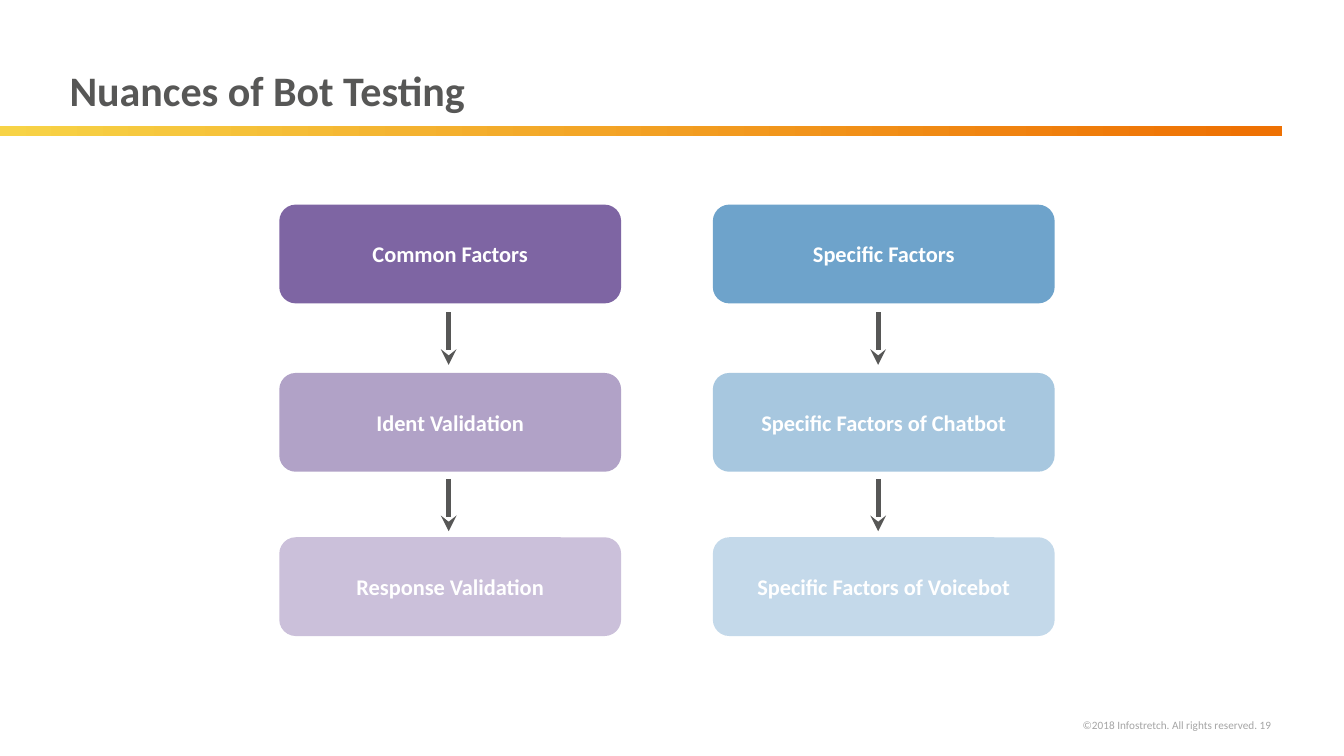
from lxml.etree import SubElement
from pptx import Presentation
from pptx.dml.color import RGBColor
from pptx.enum.shapes import MSO_CONNECTOR, MSO_SHAPE
from pptx.enum.text import MSO_ANCHOR, MSO_AUTO_SIZE, PP_ALIGN
from pptx.oxml.ns import qn
from pptx.util import Pt

EMU_PER_PX = 9144  # 100 px to the inch

WHITE = RGBColor(0xFF, 0xFF, 0xFF)
DARK_GRAY = RGBColor(0x57, 0x57, 0x56)
LIGHT_GRAY = RGBColor(0xA5, 0xA5, 0xA5)
YELLOW = RGBColor(0xF7, 0xD3, 0x46)
ORANGE = RGBColor(0xEE, 0x71, 0x03)
PURPLE = RGBColor(0x7E, 0x65, 0xA3)
MID_PURPLE = RGBColor(0xB1, 0xA2, 0xC7)
PALE_PURPLE = RGBColor(0xCB, 0xC0, 0xDA)
BLUE = RGBColor(0x6E, 0xA3, 0xCB)
MID_BLUE = RGBColor(0xA7, 0xC7, 0xDF)
PALE_BLUE = RGBColor(0xC4, 0xD9, 0xEA)

TITLE_FONT = {"size": Pt(30), "bold": True}
FACTOR_FONT = {"size": Pt(16), "bold": True}
FOOTER_FONT = {"size": Pt(8), "bold": False}

FACTOR_HEIGHT = 98
FACTOR_TOPS = (0, 167, 330)
ARROW_TOPS = (107, 272)
ARROW_LENGTH = 52

# box (left, top, width), arrow offset from the left edge, factors
FACTOR_COLUMNS = (
    ((277, 203, 339), 168, (
        ("Common Factors", PURPLE),
        ("Ident Validation", MID_PURPLE),
        ("Response Validation", PALE_PURPLE),
    )),
    ((707, 203, 339), 164, (
        ("Specific Factors", BLUE),
        ("Specific Factors of Chatbot", MID_BLUE),
        ("Specific Factors of Voicebot", PALE_BLUE),
    )),
)


def px(*lengths):
    return [length * EMU_PER_PX for length in lengths]


def write_text(shape, text, color, font_format, align, anchor):
    frame = shape.text_frame
    frame.text = text
    frame.word_wrap = True
    frame.auto_size = MSO_AUTO_SIZE.NONE
    frame.vertical_anchor = anchor
    paragraph = frame.paragraphs[0]
    paragraph.alignment = align
    font = paragraph.runs[0].font
    for name, value in {"name": "Calibri", **font_format}.items():
        setattr(font, name, value)
    font.color.rgb = color
    return paragraph


def add_header(slide, left, top, width, height):
    """Place the title in the box and the gradient bar below it."""
    title = slide.shapes.title
    title.left, title.top, title.width, title.height = px(left, top, width, height)
    paragraph = write_text(title, "Nuances of Bot Testing", DARK_GRAY, TITLE_FONT,
                           PP_ALIGN.LEFT, MSO_ANCHOR.BOTTOM)
    paragraph.line_spacing = 0.7

    bar = slide.shapes.add_shape(MSO_SHAPE.RECTANGLE,
                                 *px(0, top + height + 7, left + width, 10))
    bar.shadow.inherit = False
    bar.line.fill.background()
    bar.fill.gradient()
    bar.fill.gradient_angle = 0
    for stop, position, color in zip(bar.fill.gradient_stops, (0, 0.98), (YELLOW, ORANGE)):
        stop.position = position
        stop.color.rgb = color


def add_factor(slide, text, color, left, top, width, height):
    factor = slide.shapes.add_shape(MSO_SHAPE.ROUNDED_RECTANGLE,
                                    *px(left, top, width, height))
    factor.shadow.inherit = False
    factor.fill.solid()
    factor.fill.fore_color.rgb = color
    factor.line.fill.background()
    write_text(factor, text, WHITE, FACTOR_FONT, PP_ALIGN.CENTER, MSO_ANCHOR.MIDDLE)


def add_down_arrow(slide, x, top, length):
    arrow = slide.shapes.add_connector(MSO_CONNECTOR.STRAIGHT,
                                       *px(x, top, x, top + length))
    arrow.line.width = Pt(3.75)
    arrow.line.color.rgb = DARK_GRAY
    properties = arrow.element.spPr
    SubElement(properties.get_or_add_ln(), qn("a:tailEnd"), type="stealth")
    SubElement(properties, qn("a:effectLst"))


def add_factor_column(slide, box, arrow_offset, factors):
    left, top, width = box
    for (text, color), offset in zip(factors, FACTOR_TOPS):
        add_factor(slide, text, color, left, top + offset, width, FACTOR_HEIGHT)
    for offset in ARROW_TOPS:
        add_down_arrow(slide, left + arrow_offset, top + offset, ARROW_LENGTH)


def add_footer(slide, *box):
    footer = slide.shapes.add_textbox(*px(*box))
    write_text(footer, "©2018 Infostretch. All rights reserved. 19", LIGHT_GRAY,
               FOOTER_FONT, PP_ALIGN.RIGHT, MSO_ANCHOR.TOP)


def main():
    presentation = Presentation()
    presentation.slide_width, presentation.slide_height = px(1333, 750)
    title_only = presentation.slide_layouts.get_by_name("Title Only")
    slide = presentation.slides.add_slide(title_only)
    add_footer(slide, 780, 708, 491, 24)
    add_header(slide, 59, 20, 1213, 98)
    for box, arrow_offset, factors in FACTOR_COLUMNS:
        add_factor_column(slide, box, arrow_offset, factors)
    presentation.save("out.pptx")


if __name__ == "__main__":
    main()
